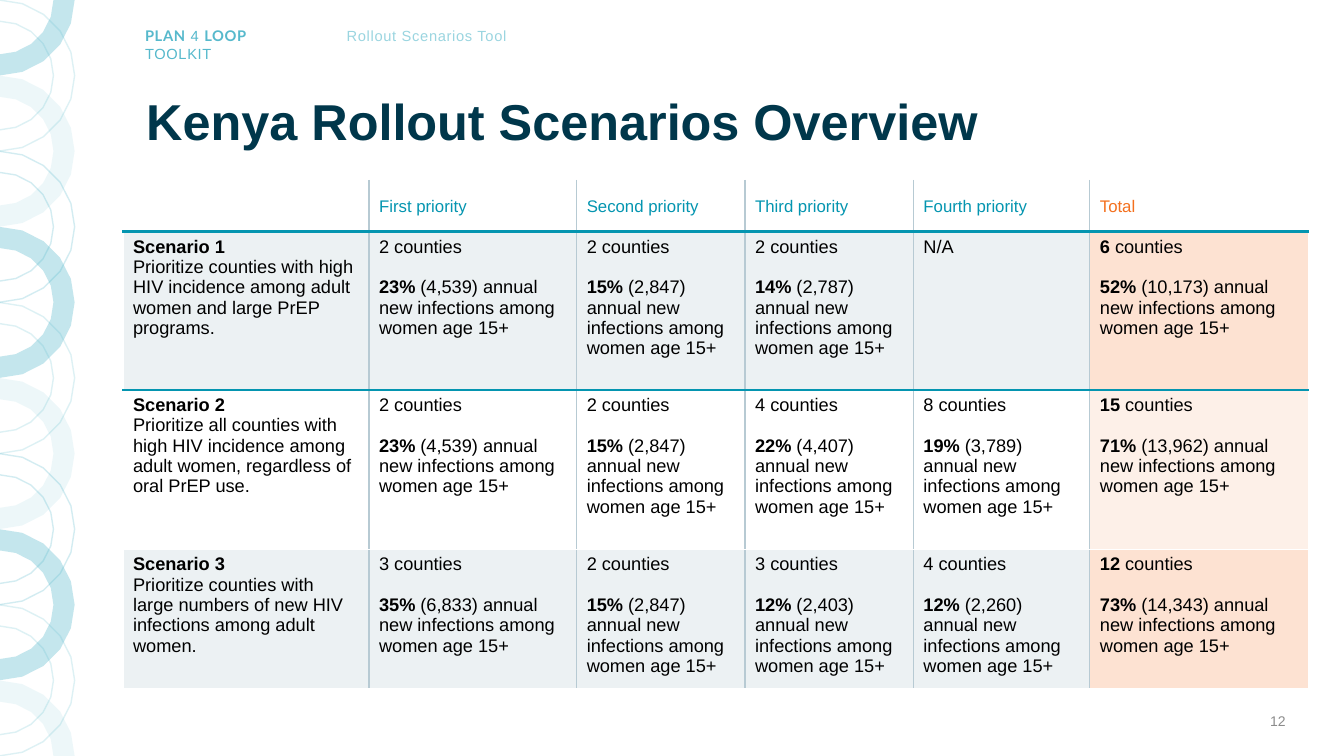
from math import cos, radians, sin

from lxml import etree
from pptx import Presentation
from pptx.dml.color import RGBColor
from pptx.enum.text import MSO_ANCHOR, MSO_AUTO_SIZE, PP_ALIGN
from pptx.oxml.ns import qn
from pptx.util import Inches, Pt

TOP, MIDDLE = MSO_ANCHOR.TOP, MSO_ANCHOR.MIDDLE
LEFT, RIGHT = PP_ALIGN.LEFT, PP_ALIGN.RIGHT
NO_FIT = MSO_AUTO_SIZE.NONE
TITLE_ONLY = 5

AQUA, PALE_AQUA, TEAL, NAVY = "56B9CC", "9AD5E0", "0495B0", "00374B"
ORANGE, PEACH, MIST, RULE = "F4701E", "FDE2D2", "DBE5E9", "B7CAD3"
WHITE, BLACK, GREY = "FFFFFF", "000000", "8C8C8C"

HEADINGS = ["First priority", "Second priority", "Third priority", "Fourth priority", "Total"]
SCENARIOS = [
    ("Prioritize counties with high HIV incidence among adult women and large PrEP programs.",
     [("2", "23%", "4,539"), ("2", "15%", "2,847"), ("2", "14%", "2,787"), None,
      ("6", "52%", "10,173")]),
    ("Prioritize all counties with high HIV incidence among adult women, "
     "regardless of oral PrEP use.",
     [("2", "23%", "4,539"), ("2", "15%", "2,847"), ("4", "22%", "4,407"),
      ("8", "19%", "3,789"), ("15", "71%", "13,962")]),
    ("Prioritize counties with large numbers of new HIV infections among adult women.",
     [("3", "35%", "6,833"), ("2", "15%", "2,847"), ("3", "12%", "2,403"),
      ("4", "12%", "2,260"), ("12", "73%", "14,343")]),
]
COLUMN_WIDTHS = [2.44, 2.06, 1.67, 1.67, 1.75, 2.17]
ROW_HEIGHTS = [0.51, 1.57, 1.58, 1.14]
RING_STYLES = [("fill", 35), ("line", 20), ("fill", 10), ("line", 25)]
RING_STEP, OUTER_RADIUS, INNER_RADIUS, RING_X = 0.75, 0.75, 0.54, -0.01
ARC_STEP = 18


def color(value):
    """Turn a hex string into a colour."""
    return RGBColor.from_string(value)


def write(para, text, size=13, ink=BLACK, bold=False, font="Arial", spacing=None):
    """Add one formatted span of text to a paragraph."""
    span = para.add_run()
    span.text = text
    span.font.name, span.font.size, span.font.bold = font, Pt(size), bold
    span.font.color.rgb = color(ink)
    if spacing:
        span.font._element.set("spc", str(round(spacing * 100)))


def paint(fill, element, value, opacity=100):
    """Give a shape, line or cell a solid colour with an opacity in percent."""
    fill.solid()
    fill.fore_color.rgb = color(value)
    if opacity < 100:
        tint = next(element.iter(qn("a:srgbClr")))
        etree.SubElement(tint, qn("a:alpha"), val=str(opacity * 1000))


def set_borders(cell, **sides):
    """Draw the cell borders from (colour, points) pairs named L, R, T and B."""
    properties = cell._tc.get_or_add_tcPr()
    for position, (side, (value, width)) in enumerate(sides.items()):
        line = etree.Element(qn(f"a:ln{side}"), w=str(Pt(width)))
        solid = etree.SubElement(line, qn("a:solidFill"))
        etree.SubElement(solid, qn("a:srgbClr"), val=value)
        properties.insert(position, line)


class Page:
    """Holds the current slide and draws its elements."""

    def __init__(self, deck):
        """Add a slide with a title."""
        self.slide = deck.slides.add_slide(deck.slide_layouts[TITLE_ONLY])
        self.shapes = self.slide.shapes

    def title(self, text, left, top, width, height):
        """Place and format the title."""
        box = self.shapes.title
        box.left, box.top, box.width, box.height = map(Inches, (left, top, width, height))
        frame = box.text_frame
        frame.auto_size, frame.vertical_anchor = NO_FIT, TOP
        para = frame.paragraphs[0]
        para.alignment, para.line_spacing = LEFT, 0.9
        write(para, text, size=36, ink=NAVY, bold=True)

    def text(self, left, top, width, height, align=LEFT, anchor=TOP):
        """Add a text box and return its first paragraph."""
        box = self.shapes.add_textbox(*map(Inches, (left, top, width, height)))
        frame = box.text_frame
        frame.word_wrap, frame.vertical_anchor = True, anchor
        frame.paragraphs[0].alignment = align
        return frame.paragraphs[0]

    def half_ring(self, center, start, end, kind, opacity):
        """Draw a ring section around a point on the left edge."""
        angles = range(start, end + 1, ARC_STEP)
        route = [(OUTER_RADIUS, angle) for angle in angles]
        route += [(INNER_RADIUS, angle) for angle in reversed(angles)]
        points = [(Inches(RING_X + radius * cos(radians(angle))),
                   Inches(center + radius * sin(radians(angle)))) for radius, angle in route]
        builder = self.shapes.build_freeform(*points[0])
        builder.add_line_segments(points[1:], close=True)
        ring = builder.convert_to_shape()
        ring.shadow.inherit = False
        properties = ring._element.spPr
        if kind == "fill":
            paint(ring.fill, properties, AQUA, opacity)
            ring.line.fill.background()
        else:
            ring.fill.background()
            ring.line.width = Pt(1)
            paint(ring.line.fill, properties, AQUA, opacity)

    def cell(self, table, row, column):
        """Fill and frame one table cell and return it."""
        cell = table.cell(row, column)
        total = column == len(COLUMN_WIDTHS) - 1
        shaded = row % 2 == 1
        if row == 0 or not (total or shaded):
            value, opacity = WHITE, 100
        elif total:
            value, opacity = PEACH, 100 if shaded else 50
        else:
            value, opacity = MIST, 50
        paint(cell.fill, cell._tc, value, opacity)
        rules = [(WHITE, 1), (TEAL, 2.25), (TEAL, 1.5), (WHITE, 1), (WHITE, 1)]
        set_borders(cell,
                    L=(RULE if column else WHITE, 1),
                    R=(WHITE if total else RULE, 1),
                    T=rules[row], B=rules[row + 1])
        cell.vertical_anchor = TOP if row else MIDDLE
        return cell

    def scenario_table(self, left, top):
        """Add the table of scenarios."""
        frame = self.shapes.add_table(
            len(ROW_HEIGHTS), len(COLUMN_WIDTHS), Inches(left), Inches(top),
            Inches(sum(COLUMN_WIDTHS)), Inches(sum(ROW_HEIGHTS)))
        table = frame.table
        table.first_row = table.horz_banding = False
        for column, width in zip(table.columns, COLUMN_WIDTHS):
            column.width = Inches(width)
        for row, height in zip(table.rows, ROW_HEIGHTS):
            row.height = Inches(height)
        self.cell(table, 0, 0)
        for column, heading in enumerate(HEADINGS, 1):
            para = self.cell(table, 0, column).text_frame.paragraphs[0]
            write(para, heading, size=12, ink=ORANGE if heading == "Total" else TEAL)
        for row, (summary, results) in enumerate(SCENARIOS, 1):
            label = self.cell(table, row, 0).text_frame
            write(label.paragraphs[0], f"Scenario {row}", bold=True)
            write(label.add_paragraph(), summary)
            for column, result in enumerate(results, 1):
                body = self.cell(table, row, column).text_frame
                self.result(body, result, total=column == len(results))

    def result(self, body, result, total):
        """Write the county count and share of infections in a cell."""
        para = body.paragraphs[0]
        if result is None:
            write(para, "N/A")
            return
        count, share, infections = result
        write(para, count, bold=total)
        write(para, " counties")
        para = body.add_paragraph()
        para.space_before = Pt(14.5)
        write(para, share, bold=True)
        write(para, f" ({infections}) annual new infections among women age 15+")


def main():
    """Build the slide and save it."""
    deck = Presentation()
    deck.slide_width, deck.slide_height = Inches(13.33), Inches(7.5)
    page = Page(deck)
    last = 10
    for index in range(last + 1):
        start = 0 if index == 0 else -90
        end = 0 if index == last else 90
        page.half_ring(index * RING_STEP, start, end, *RING_STYLES[index % len(RING_STYLES)])
    header = {"size": 10.5, "spacing": 0.5}
    brand = page.text(1.34, 0.22, 1.84, 0.28)
    write(brand, "PLAN", ink=AQUA, bold=True, font="Lato", **header)
    write(brand, " 4 ", ink=AQUA, **header)
    write(brand, "LOOP", ink=AQUA, bold=True, font="Lato", **header)
    brand.add_line_break()
    write(brand, "TOOLKIT", ink=AQUA, **header)
    write(page.text(3.34, 0.22, 1.84, 0.28), "Rollout Scenarios Tool", ink=PALE_AQUA, **header)
    page.title("Kenya Rollout Scenarios Overview", 1.35, 0.91, 11.5, 1.45)
    write(page.text(9.85, 6.95, 3, 0.4, RIGHT, MIDDLE), "12", size=10, ink=GREY)
    page.scenario_table(1.22, 1.79)
    deck.save("out.pptx")


if __name__ == "__main__":
    main()
